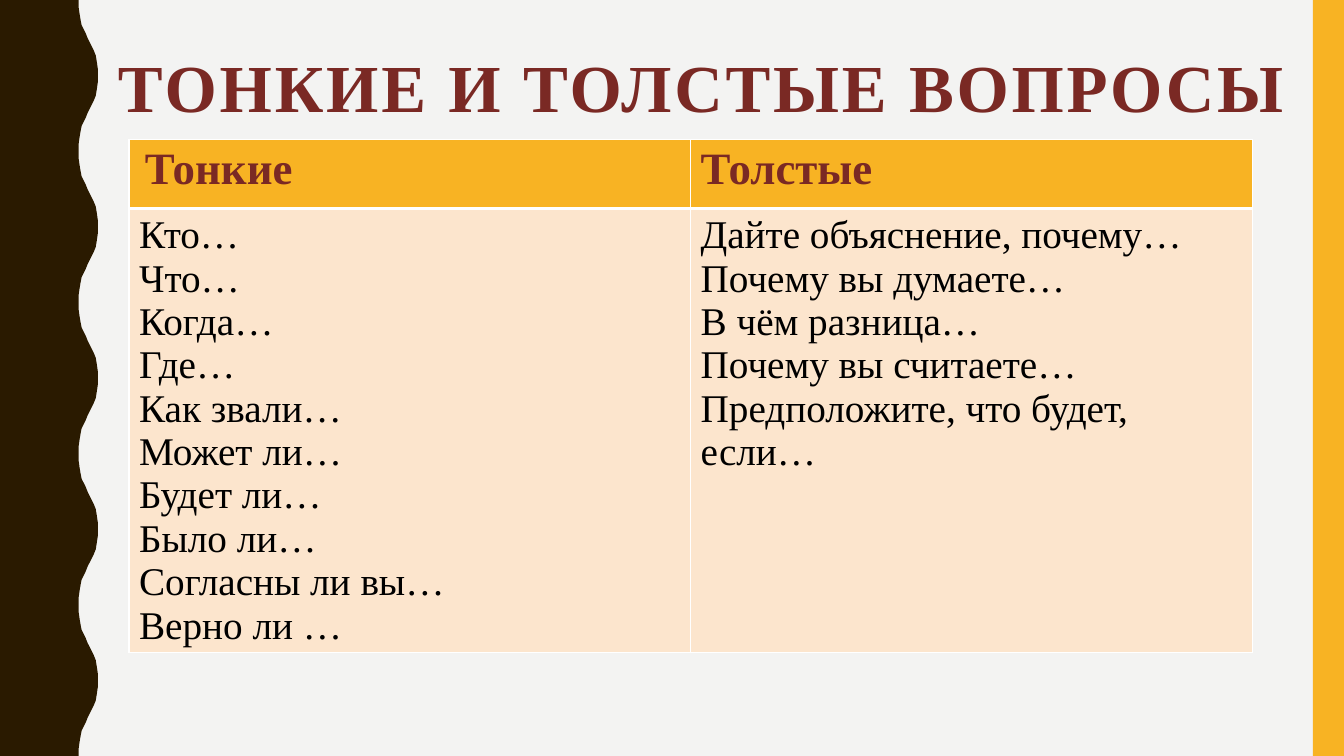
"""Build the slide comparing thin and thick questions."""
from lxml.etree import SubElement
from pptx import Presentation
from pptx.dml.color import RGBColor
from pptx.enum.shapes import MSO_SHAPE as Shape
from pptx.enum.text import MSO_ANCHOR as Anchor, PP_ALIGN as Align
from pptx.oxml.ns import qn
from pptx.util import Inches, Pt

CREAM = RGBColor(0xF3, 0xF3, 0xF2)
BROWN = RGBColor(0x2A, 0x1A, 0x00)
AMBER = RGBColor(0xF8, 0xB3, 0x23)
MAROON = RGBColor(0x7A, 0x29, 0x24)
PEACH = RGBColor(0xFC, 0xE5, 0xCD)
BLACK = RGBColor(0x00, 0x00, 0x00)
SERIF = "Times New Roman"

HALF_WAVE = [(0.78, 0), (0.78, 0.07), (0.79, 0.14), (0.8, 0.2), (0.81, 0.25),
             (0.83, 0.29), (0.85, 0.33), (0.87, 0.38), (0.89, 0.42), (0.91, 0.46),
             (0.93, 0.5), (0.95, 0.55), (0.96, 0.61), (0.97, 0.68), (0.97, 0.75)]
WAVE_LENGTH = 1.5
WAVE_COUNT = 5

HEADINGS = ["Тонкие", "Толстые"]
QUESTIONS = [
    ["Кто…", "Что…", "Когда…", "Где…", "Как звали…", "Может ли…",
     "Будет ли…", "Было ли…", "Согласны ли вы…", "Верно ли …"],
    ["Дайте объяснение, почему…", "Почему вы думаете…", "В чём разница…",
     "Почему вы считаете…", "Предположите, что будет, если…"],
]


def paint(shape, color):
    shape.shadow.inherit = False
    shape.fill.solid()
    shape.fill.fore_color.rgb = color
    shape.line.fill.background()


def style_cell(cell, color, top, bottom):
    props = cell._tc.get_or_add_tcPr()
    for side, points in (("L", 1), ("R", 1), ("T", top), ("B", bottom)):
        line = SubElement(props, qn(f"a:ln{side}"), w=str(Pt(points)))
        SubElement(SubElement(line, qn("a:solidFill")), qn("a:srgbClr"), val="FFFFFF")
    cell.fill.solid()
    cell.fill.fore_color.rgb = color


deck = Presentation()
deck.slide_width = Inches(13.33)
deck.slide_height = Inches(7.5)
page = deck.slides.add_slide(deck.slide_layouts[5])
page.background.fill.solid()
page.background.fill.fore_color.rgb = CREAM

one_wave = HALF_WAVE + [(x, WAVE_LENGTH - y) for x, y in reversed(HALF_WAVE[:-1])]
edge = [(Inches(x), Inches(y + number * WAVE_LENGTH))
        for number in range(WAVE_COUNT) for x, y in one_wave]
builder = page.shapes.build_freeform(0, 0)
builder.add_line_segments(edge + [(0, deck.slide_height)], close=True)
paint(builder.convert_to_shape(), BROWN)

bar = page.shapes.add_shape(Shape.RECTANGLE, Inches(13.02), 0, Inches(0.31), Inches(7.5))
paint(bar, AMBER)

title = page.shapes.title
title.left, title.top = Inches(1.07), Inches(0.42)
title.width, title.height = Inches(11.9), Inches(0.96)
title.text_frame.vertical_anchor = Anchor.MIDDLE
para = title.text_frame.paragraphs[0]
para.alignment = Align.LEFT
para.line_spacing = 0.9
span = para.add_run()
span.text = "ТОНКИЕ И ТОЛСТЫЕ ВОПРОСЫ"
span.font.name = SERIF
span.font.size = Pt(48)
span.font.bold = True
span.font.color.rgb = MAROON
span.font._element.set("spc", "200")

table = page.shapes.add_table(2, 2, Inches(1.28), Inches(1.38),
                              Inches(11.14), Inches(4.85)).table
table.rows[0].height = Inches(0.69)
table.rows[1].height = Inches(4.16)

for column, (heading, questions) in enumerate(zip(HEADINGS, QUESTIONS)):
    table.columns[column].width = Inches(5.57)
    head = table.cell(0, column)
    style_cell(head, AMBER, 1, 3)
    para = head.text_frame.paragraphs[0]
    para.font.bold = True
    para.font.color.rgb = MAROON
    pieces = [(heading, SERIF, 32)]
    if column == 0:
        pieces.insert(0, (" ", "Cabin", 18))
    for text, font_name, size in pieces:
        span = para.add_run()
        span.text = text
        span.font.name = font_name
        span.font.size = Pt(size)

    body = table.cell(1, column)
    style_cell(body, PEACH, 3, 1)
    body.text_frame.text = "\n".join(questions)
    for para in body.text_frame.paragraphs:
        para.font.name = SERIF
        para.font.size = Pt(28)
        para.font.bold = False
        para.font.color.rgb = BLACK

deck.save("out.pptx")
